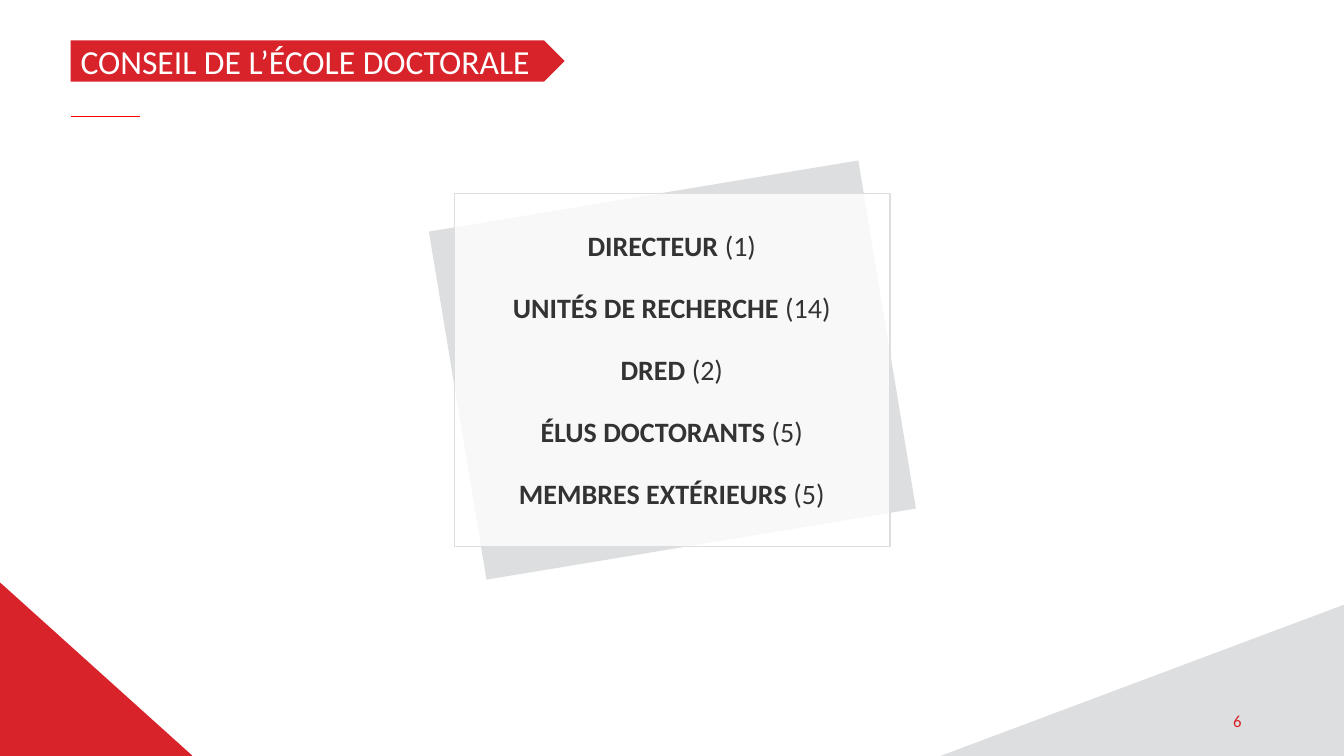
from lxml.etree import SubElement
from pptx import Presentation
from pptx.dml.color import RGBColor
from pptx.enum.shapes import MSO_CONNECTOR, MSO_SHAPE
from pptx.enum.text import MSO_ANCHOR, PP_ALIGN
from pptx.oxml.ns import qn
from pptx.util import Cm, Pt

COLORS = {
    "red": "D8232A",
    "rule": "FF0000",
    "gray": "DCDEE0",
    "dark": "333333",
    "white": "FFFFFF",
}
MEMBERS = [
    ("DIRECTEUR ", "(1)"),
    ("UNITÉS DE RECHERCHE ", "(14)"),
    ("DRED ", "(2)"),
    ("ÉLUS DOCTORANTS ", "(5)"),
    ("MEMBRES EXTÉRIEURS ", "(5)"),
]
WIDTH, HEIGHT = 33.87, 19.05
MARGIN = 1.78
CARD = (11.46, 4.88, 10.97, 8.89)


class SlideBuilder:
    """Draws styled elements on the current slide."""

    font = "Calibri"

    def __init__(self, page):
        self.page = page

    def color(self, name):
        return RGBColor.from_string(COLORS[name])

    def shape(self, kind, area, fill, line=None, alpha=None, flip=False):
        shape = self.page.shapes.add_shape(kind, *map(Cm, area))
        shape.shadow.inherit = False
        shape.fill.solid()
        shape.fill.fore_color.rgb = self.color(fill)
        if line:
            shape.line.color.rgb = self.color(line)
            shape.line.width = Pt(1)
        else:
            shape.line.fill.background()
        if alpha:
            tint = shape._element.spPr.find(qn("a:solidFill"))[0]
            SubElement(tint, qn("a:alpha"), val=str(alpha * 1000))
        if flip:
            shape._element.spPr.find(qn("a:xfrm")).set("flipH", "1")
        return shape

    def rule(self, left, top, length, color):
        line = self.page.shapes.add_connector(
            MSO_CONNECTOR.STRAIGHT, Cm(left), Cm(top), Cm(left + length), Cm(top)
        )
        line.line.color.rgb = self.color(color)
        line.line.width = Pt(0.5)
        SubElement(line._element.spPr, qn("a:effectLst"))

    def label(self, shape, parts, size, color, align, anchor=MSO_ANCHOR.MIDDLE):
        frame = shape.text_frame
        frame.word_wrap = True
        frame.vertical_anchor = anchor
        para = frame.paragraphs[0]
        para.alignment = align
        for text, bold in parts:
            span = para.add_run()
            span.text = text
            span.font.name = self.font
            span.font.size = Pt(size)
            span.font.bold = bold
            span.font.color.rgb = self.color(color)

    def text(self, area, parts, size, color, align, anchor=MSO_ANCHOR.MIDDLE):
        box = self.page.shapes.add_textbox(*map(Cm, area))
        self.label(box, parts, size, color, align, anchor)


def main():
    deck = Presentation()
    deck.slide_width, deck.slide_height = Cm(WIDTH), Cm(HEIGHT)
    builder = SlideBuilder(deck.slides.add_slide(deck.slide_layouts[6]))

    builder.shape(MSO_SHAPE.RIGHT_TRIANGLE, (0, 14.7, 4.83, 4.35), "red", line="red")
    builder.shape(
        MSO_SHAPE.RIGHT_TRIANGLE, (23.7, 15.24, 10.17, 3.81), "gray", flip=True
    )
    builder.text((23.92, 17.66, 7.62, 1), [("6", False)], 12, "red", PP_ALIGN.RIGHT)

    backdrop = builder.shape(MSO_SHAPE.RECTANGLE, CARD, "gray")
    backdrop.rotation = 350.6
    builder.shape(MSO_SHAPE.RECTANGLE, CARD, "white", line="gray", alpha=80)

    title = builder.shape(MSO_SHAPE.PENTAGON, (MARGIN, 1.02, 12.45, 1.04), "red")
    builder.label(
        title, [("CONSEIL DE L’ÉCOLE DOCTORALE", False)], 24, "white", PP_ALIGN.LEFT
    )
    builder.rule(MARGIN, 2.92, 1.76, "rule")

    for row, (role, count) in enumerate(MEMBERS):
        builder.text(
            (11.81, 5.64 + 1.56 * row, 10.24, 1.11),
            [(role, True), (count, False)],
            20, "dark", PP_ALIGN.CENTER, MSO_ANCHOR.TOP,
        )

    deck.save("out.pptx")


if __name__ == "__main__":
    main()
